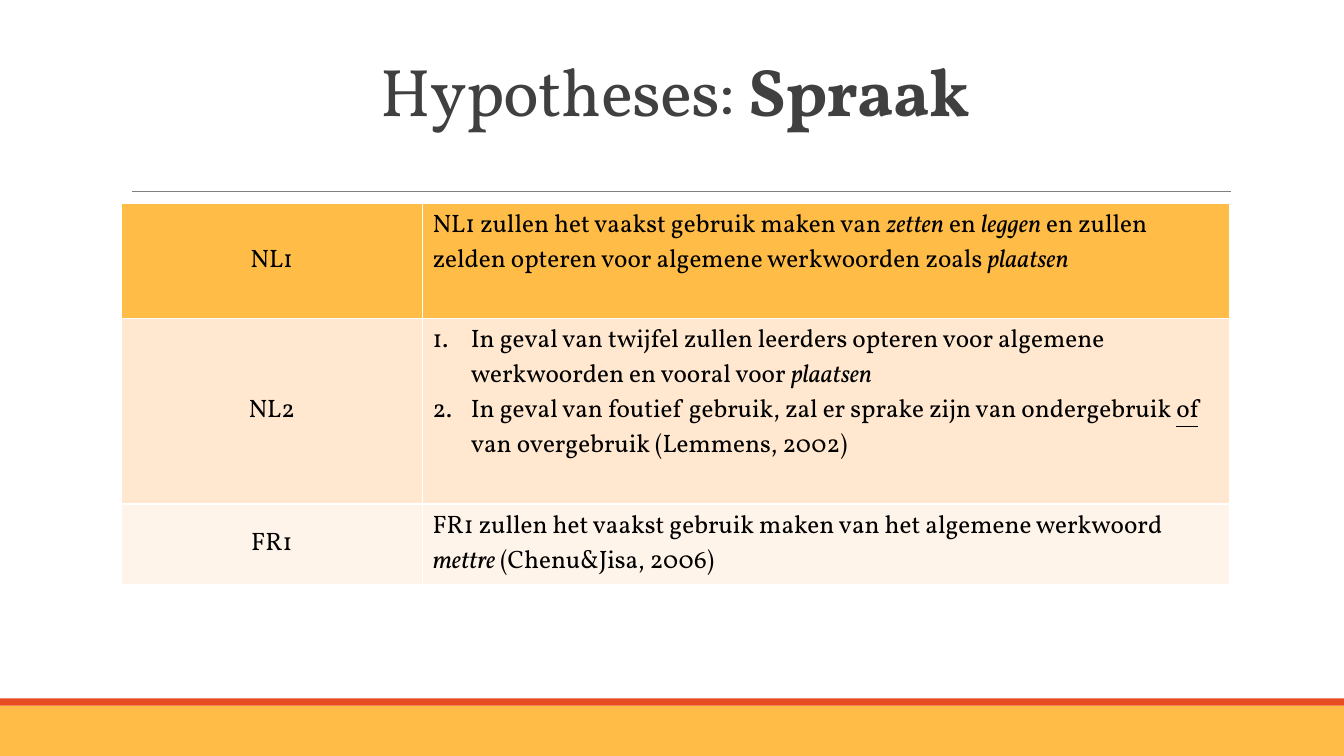
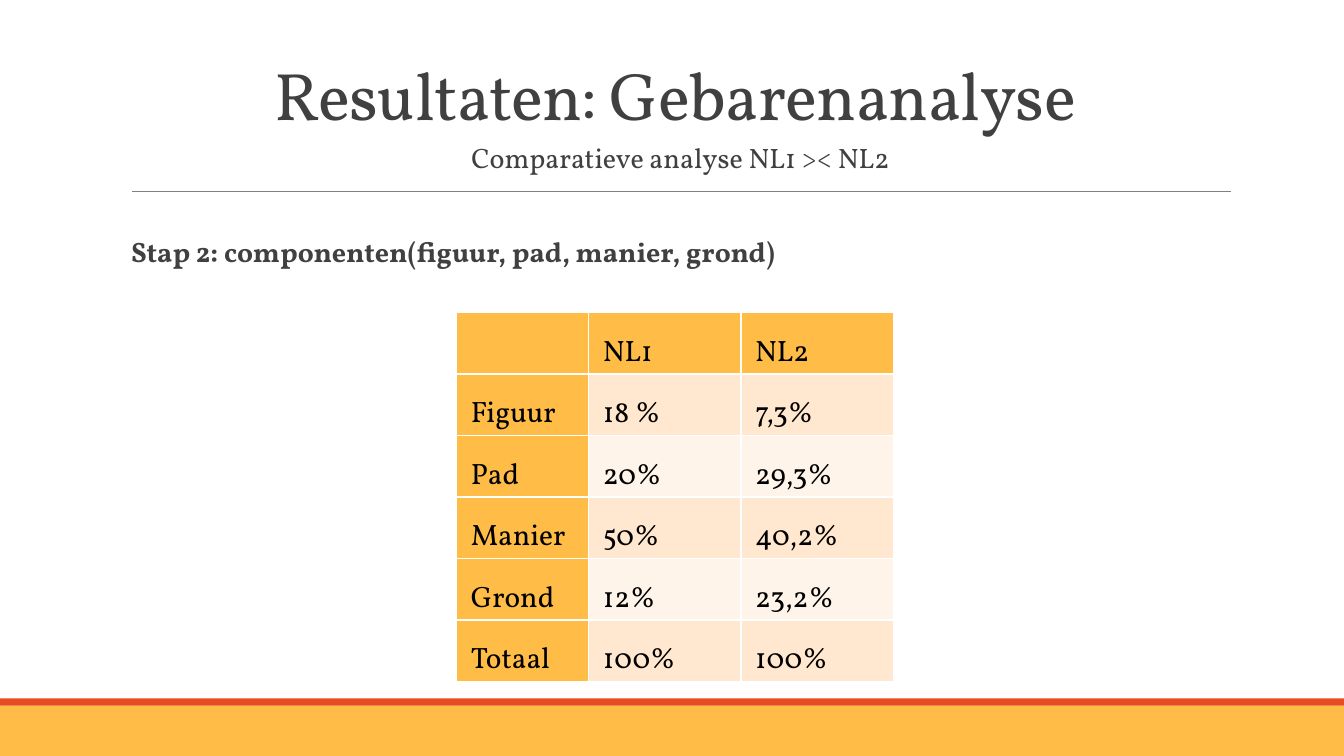
from dataclasses import dataclass
from typing import Optional

from pptx import Presentation
from pptx.dml.color import RGBColor
from pptx.enum.shapes import MSO_CONNECTOR, MSO_SHAPE
from pptx.enum.text import MSO_ANCHOR, MSO_AUTO_SIZE, PP_ALIGN
from pptx.oxml.ns import qn
from pptx.util import Inches, Pt
from lxml.etree import SubElement

FONT = "Vollkorn"
COLORS = {
    "gold": "FFBD47",
    "red": "E84C22",
    "rule": "808080",
    "heading": "404040",
    "text": "000000",
    "border": "FFFFFF",
    "dark_band": "FFE8CF",
    "light_band": "FFF4E9",
}
SLIDE_WIDTH = 13.33
CONTENT_LEFT, CONTENT_WIDTH = 1.2, 11


@dataclass(frozen=True)
class Run:
    text: str
    bold: bool = False
    italic: bool = False
    underline: bool = False


@dataclass(frozen=True)
class TextStyle:
    size: float
    color: str
    align: Optional[PP_ALIGN] = None
    line_spacing: Optional[float] = None
    before: Optional[float] = None
    after: Optional[float] = None
    letter_spacing: float = 0
    margin: float = 0
    indent: float = 0
    bullet: Optional[str] = None


@dataclass(frozen=True)
class Band:
    top: float
    height: float
    color: str


@dataclass(frozen=True)
class CellLayout:
    style: TextStyle
    anchor: MSO_ANCHOR = MSO_ANCHOR.TOP
    side_margin: float = 0.1
    end_margin: float = 0.05


BANDS = [Band(7, 0.5, "gold"), Band(6.93, 0.07, "red")]
TITLE = TextStyle(48, "heading", PP_ALIGN.CENTER, 0.85, before=0, letter_spacing=-0.5)
SUBTITLE = TextStyle(20, "heading", PP_ALIGN.CENTER, 0.9, 12, 2, margin=0.1, bullet="buNone")
STEP = TextStyle(20, "heading", PP_ALIGN.LEFT, 0.9, 44, 2, margin=0.1, bullet="buNone")
LABEL = CellLayout(TextStyle(18, "text", PP_ALIGN.CENTER), MSO_ANCHOR.MIDDLE)
STATEMENT = CellLayout(TextStyle(18, "text"))
NUMBERED = CellLayout(
    TextStyle(18, "text", margin=0.38, indent=-0.38, bullet="buAutoNum"))
FIGURE = CellLayout(
    TextStyle(21, "text", PP_ALIGN.JUSTIFY, 1.5), side_margin=0.14, end_margin=0)

HYPOTHESES = [
    ("NL1", STATEMENT, [[
        Run("NL1 zullen het vaakst gebruik maken van "),
        Run("zetten", italic=True),
        Run(" en "),
        Run("leggen", italic=True),
        Run(" en zullen zelden opteren voor algemene werkwoorden zoals "),
        Run("plaatsen", italic=True),
    ]]),
    ("NL2", NUMBERED, [
        [
            Run("In geval van twijfel zullen leerders opteren voor algemene "
                "werkwoorden en vooral voor "),
            Run("plaatsen", italic=True),
        ],
        [
            Run("In geval van foutief gebruik, zal er sprake zijn van ondergebruik "),
            Run("of", underline=True),
            Run(" van overgebruik (Lemmens, 2002)"),
        ],
    ]),
    ("FR1", STATEMENT, [[
        Run("FR1 zullen het vaakst gebruik maken van het algemene werkwoord "),
        Run("mettre", italic=True),
        Run(" (Chenu&Jisa, 2006)"),
    ]]),
]
COMPONENTS = [
    ("", "NL1", "NL2"),
    ("Figuur", "18 %", "7,3%"),
    ("Pad", "20%", "29,3%"),
    ("Manier", "50%", "40,2%"),
    ("Grond", "12%", "23,2%"),
    ("Totaal", "100%", "100%"),
]


def rgb(name: str) -> RGBColor:
    return RGBColor.from_string(COLORS[name])


def write_paragraph(paragraph, runs: list[Run], style: TextStyle) -> None:
    paragraph.alignment = style.align
    paragraph.line_spacing = style.line_spacing
    if style.before is not None:
        paragraph.space_before = Pt(style.before)
    if style.after is not None:
        paragraph.space_after = Pt(style.after)
    if style.bullet:
        properties = paragraph._p.get_or_add_pPr()
        properties.set("marL", str(Inches(style.margin)))
        properties.set("indent", str(Inches(style.indent)))
        bullet = SubElement(properties, qn(f"a:{style.bullet}"))
        if style.bullet == "buAutoNum":
            bullet.set("type", "arabicPeriod")
    for part in runs:
        run = paragraph.add_run()
        run.text = part.text
        font = run.font
        font.name, font.size = FONT, Pt(style.size)
        font.color.rgb = rgb(style.color)
        font.bold, font.italic = part.bold, part.italic
        font.underline = part.underline
        if style.letter_spacing:
            run._r.get_or_add_rPr().set("spc", str(int(style.letter_spacing * 100)))


def write_paragraphs(frame, paragraphs: list[tuple[list[Run], TextStyle]]) -> None:
    for index, (runs, style) in enumerate(paragraphs):
        paragraph = frame.add_paragraph() if index else frame.paragraphs[0]
        write_paragraph(paragraph, runs, style)


def place(shape, top: float, height: float) -> None:
    """Fit a placeholder to the content column."""
    shape.left, shape.width = Inches(CONTENT_LEFT), Inches(CONTENT_WIDTH)
    shape.top, shape.height = Inches(top), Inches(height)
    shape.text_frame.word_wrap = True
    shape.text_frame.auto_size = MSO_AUTO_SIZE.NONE


def add_frame(slide) -> None:
    """Draw the bottom bands and the rule under the heading."""
    for band in BANDS:
        shape = slide.shapes.add_shape(
            MSO_SHAPE.RECTANGLE, 0, Inches(band.top),
            Inches(SLIDE_WIDTH), Inches(band.height))
        shape.shadow.inherit = False
        shape.fill.solid()
        shape.fill.fore_color.rgb = rgb(band.color)
        shape.line.fill.background()
    rule = slide.shapes.add_connector(
        MSO_CONNECTOR.STRAIGHT, Inches(1.31), Inches(1.9), Inches(12.21), Inches(1.9))
    rule.line.color.rgb = rgb("rule")
    rule.line.width = Pt(0.5)
    SubElement(rule._element.spPr, qn("a:effectLst"))


def add_titled_slide(presentation, layout: int, title: list[Run],
                     top: float, height: float):
    slide = presentation.slides.add_slide(presentation.slide_layouts[layout])
    add_frame(slide)
    shape = slide.shapes.title
    place(shape, top, height)
    shape.text_frame.vertical_anchor = MSO_ANCHOR.BOTTOM
    write_paragraph(shape.text_frame.paragraphs[0], title, TITLE)
    return slide


def add_table(slide, left: float, top: float, widths: list[float], heights: list[float]):
    table = slide.shapes.add_table(
        len(heights), len(widths), Inches(left), Inches(top),
        Inches(sum(widths)), Inches(sum(heights))).table
    for column, width in zip(table.columns, widths):
        column.width = Inches(width)
    for row, height in zip(table.rows, heights):
        row.height = Inches(height)
    return table


def row_color(row: int) -> str:
    if row == 0:
        return "gold"
    return "dark_band" if row % 2 else "light_band"


def fill_cell(cell, paragraphs: list[list[Run]], layout: CellLayout, color: str) -> None:
    properties = cell._tc.get_or_add_tcPr()
    for side in "LRTB":
        line = SubElement(properties, qn(f"a:ln{side}"), w=str(Pt(1)))
        fill = SubElement(line, qn("a:solidFill"))
        SubElement(fill, qn("a:srgbClr"), val=COLORS["border"])
    cell.fill.solid()
    cell.fill.fore_color.rgb = rgb(color)
    cell.vertical_anchor = layout.anchor
    cell.margin_left = cell.margin_right = Inches(layout.side_margin)
    cell.margin_top = cell.margin_bottom = Inches(layout.end_margin)
    write_paragraphs(cell.text_frame, [(runs, layout.style) for runs in paragraphs])


def build_hypotheses(presentation) -> None:
    title = [Run("Hypotheses: "), Run("Spraak", bold=True)]
    slide = add_titled_slide(presentation, 5, title, 0.31, 1.03)
    table = add_table(slide, CONTENT_LEFT, 2.02, [2.99, 8.01], [1.14, 1.84, 0.8])
    for row, (group, layout, paragraphs) in enumerate(HYPOTHESES):
        fill_cell(table.cell(row, 0), [[Run(group)]], LABEL, row_color(row))
        fill_cell(table.cell(row, 1), paragraphs, layout, row_color(row))


def build_results(presentation) -> None:
    title = [Run("Resultaten: Gebarenanalyse")]
    slide = add_titled_slide(presentation, 1, title, 0.48, 0.9)
    body = slide.placeholders[1]
    place(body, 1.38, 5.06)
    body.text_frame.margin_left = body.text_frame.margin_right = 0
    write_paragraphs(body.text_frame, [
        ([Run("Comparatieve analyse NL1 >< NL2")], SUBTITLE),
        ([Run("Stap 2: componenten(figuur, pad, manier, grond)", bold=True)], STEP),
    ])
    table = add_table(slide, 4.53, 3.1, [1.31, 1.51, 1.51], [0.61] * len(COMPONENTS))
    table.first_col = True
    for row, values in enumerate(COMPONENTS):
        for column, value in enumerate(values):
            color = row_color(row) if column else "gold"
            runs = [Run(value)] if value else []
            fill_cell(table.cell(row, column), [runs], FIGURE, color)


def main() -> None:
    presentation = Presentation()
    presentation.slide_width = Inches(SLIDE_WIDTH)
    presentation.slide_height = Inches(7.5)
    build_hypotheses(presentation)
    build_results(presentation)
    presentation.save("out.pptx")


if __name__ == "__main__":
    main()
